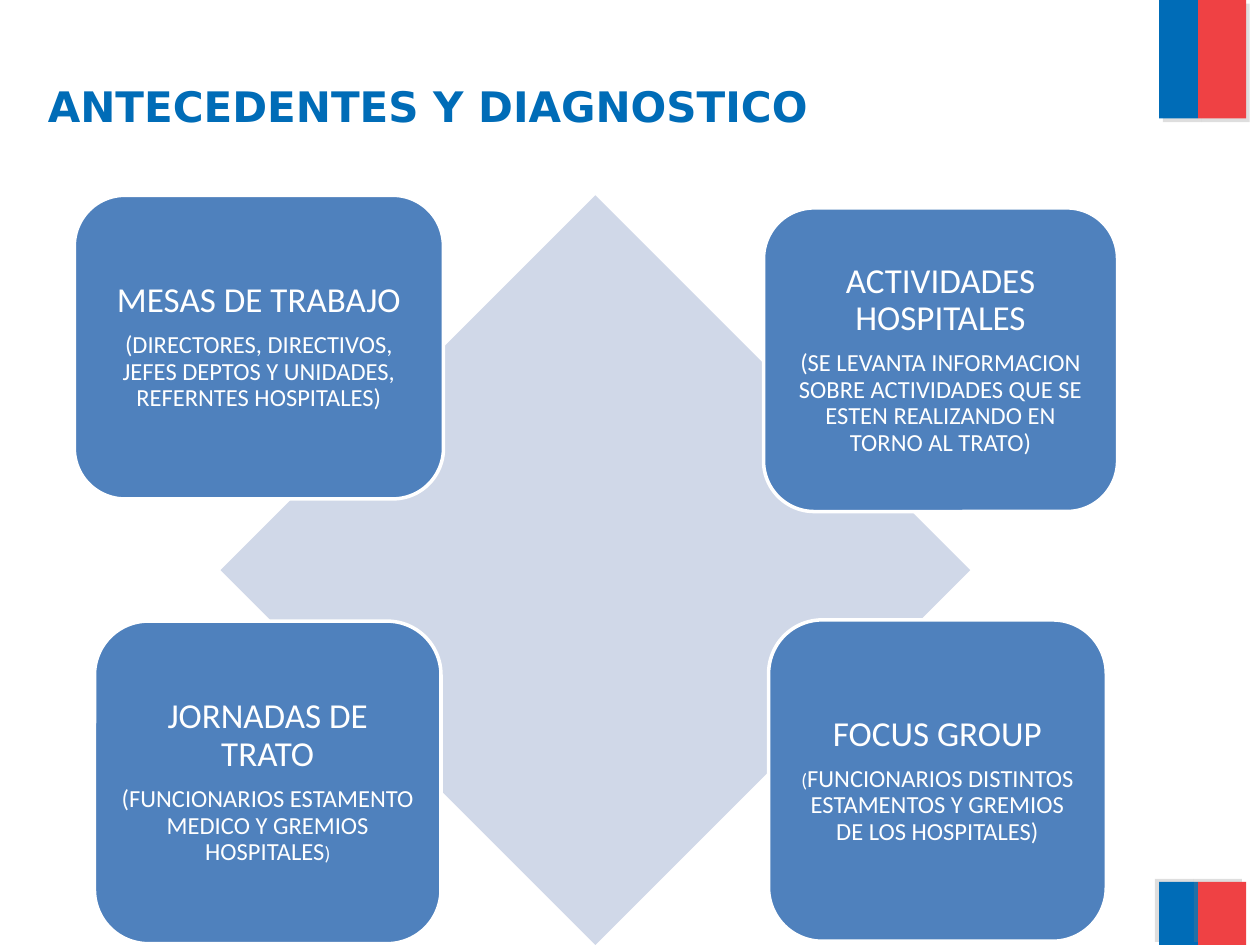
"""Build the slide on background and diagnosis: four cards around a diamond."""
from dataclasses import dataclass

from lxml import etree
from pptx import Presentation
from pptx.dml.color import RGBColor
from pptx.enum.shapes import MSO_SHAPE
from pptx.enum.text import MSO_ANCHOR, PP_ALIGN
from pptx.oxml.ns import qn
from pptx.util import Pt

RECT = MSO_SHAPE.RECTANGLE
ROUND = MSO_SHAPE.ROUNDED_RECTANGLE
DIAMOND = MSO_SHAPE.DIAMOND
MIDDLE = MSO_ANCHOR.MIDDLE
CENTER = PP_ALIGN.CENTER
EMU_PER_PX = 9144


@dataclass(frozen=True)
class Theme:
    blue: str = "006CB7"
    red: str = "EF4144"
    diamond: str = "D0D8E8"
    card: str = "4F81BD"
    white: str = "FFFFFF"
    shadow: str = "808080"
    title_font: str = "DejaVu Sans"
    body_font: str = "Calibri"
    title: int = 24
    head: int = 20
    body: int = 14
    small: int = 11


@dataclass(frozen=True)
class Box:
    x: int
    y: int
    w: int
    h: int


@dataclass(frozen=True)
class Band:
    box: Box
    color: str
    shadow_angle: int


@dataclass(frozen=True)
class Card:
    box: Box
    inset: int
    head: str
    body: tuple[tuple[str, int], ...]


T = Theme()
TITLE = Box(17, 21, 893, 125)
CENTRE = Box(175, 155, 595, 595)
BANDS = [
    Band(Box(x, y, w, h), color, angle)
    for y, h, angle in ((0, 94, 45), (700, 50, 215))
    for x, w, color in ((920, 31, T.blue), (951, 38, T.red))
]
CARDS = [
    Card(Box(59, 155, 293, 241), 8, "MESAS DE TRABAJO",
         (("(DIRECTORES, DIRECTIVOS, JEFES DEPTOS Y UNIDADES, "
           "REFERNTES HOSPITALES)", T.body),)),
    Card(Box(606, 165, 281, 241), 7, "ACTIVIDADES HOSPITALES",
         (("(SE LEVANTA INFORMACION SOBRE ACTIVIDADES QUE SE ESTEN "
           "REALIZANDO EN TORNO AL TRATO)", T.body),)),
    Card(Box(610, 492, 268, 255), 8, "FOCUS GROUP",
         (("(", T.small),
          ("FUNCIONARIOS DISTINTOS ESTAMENTOS Y GREMIOS "
           "DE LOS HOSPITALES)", T.body))),
    Card(Box(75, 493, 275, 256), 8, "JORNADAS DE TRATO",
         (("(FUNCIONARIOS ESTAMENTO MEDICO Y GREMIOS HOSPITALES", T.body),
          (")", T.small))),
]


def px(n: int) -> int:
    """Turn px into EMU."""
    return n * EMU_PER_PX


def place(box: Box) -> tuple[int, int, int, int]:
    """Return a box as EMU left, top, width and height."""
    return px(box.x), px(box.y), px(box.w), px(box.h)


def add_shape(s, kind, box: Box, color: str):
    """Add a flat filled shape without an outline."""
    sp = s.shapes.add_shape(kind, *place(box))
    sp.shadow.inherit = False
    sp.fill.solid()
    sp.fill.fore_color.rgb = RGBColor.from_string(color)
    sp.line.fill.background()
    return sp


def style_run(r, size: int, font: str, color: str, bold: bool = False) -> None:
    """Set the type of one run."""
    r.font.size = Pt(size)
    r.font.name = font
    r.font.bold = bold
    r.font.color.rgb = RGBColor.from_string(color)


def set_insets(tf, inset: int) -> None:
    """Wrap and centre a text frame vertically with equal insets."""
    tf.word_wrap = True
    tf.vertical_anchor = MIDDLE
    tf.margin_left = tf.margin_right = px(inset)
    tf.margin_top = tf.margin_bottom = px(inset)


def style_paragraph(p, space_after: int) -> None:
    """Centre a card paragraph with tight lines."""
    p.alignment = CENTER
    p.line_spacing = 0.9
    p.space_after = Pt(space_after)


def add_band(s, band: Band) -> None:
    """Add a colour band with a soft offset shadow."""
    sp = add_shape(s, RECT, band.box, band.color)
    effects = sp.fill._xPr.find(qn("a:effectLst"))
    shadow = etree.SubElement(effects, qn("a:outerShdw"), blurRad="0",
                              dist=str(Pt(3)), dir=str(band.shadow_angle * 60000),
                              algn="ctr", rotWithShape="0")
    clr = etree.SubElement(shadow, qn("a:srgbClr"), val=T.shadow)
    etree.SubElement(clr, qn("a:alpha"), val="25000")


def add_title(s, text: str) -> None:
    """Add the slide title."""
    tf = s.shapes.add_textbox(*place(TITLE)).text_frame
    set_insets(tf, 21)
    tf.text = text
    style_run(tf.paragraphs[0].runs[0], T.title, T.title_font, T.blue, True)


def add_card(s, card: Card) -> None:
    """Add a rounded card with a heading and its detail."""
    sp = add_shape(s, ROUND, card.box, T.card)
    sp.line.color.rgb = RGBColor.from_string(T.white)
    sp.line.width = Pt(2)
    tf = sp.text_frame
    set_insets(tf, card.inset)
    tf.text = card.head
    p = tf.paragraphs[0]
    style_paragraph(p, 7)
    style_run(p.runs[0], T.head, T.body_font, T.white)
    p = tf.add_paragraph()
    style_paragraph(p, 5)
    for text, size in card.body:
        r = p.add_run()
        r.text = text
        style_run(r, size, T.body_font, T.white)


def main() -> None:
    """Build and save the slide."""
    prs = Presentation()
    prs.slide_width, prs.slide_height = px(1000), px(750)
    s = prs.slides.add_slide(prs.slide_layouts[6])
    for band in BANDS:
        add_band(s, band)
    add_title(s, "ANTECEDENTES Y DIAGNOSTICO")
    add_shape(s, DIAMOND, CENTRE, T.diamond)
    for card in CARDS:
        add_card(s, card)
    prs.save("out.pptx")


if __name__ == "__main__":
    main()
